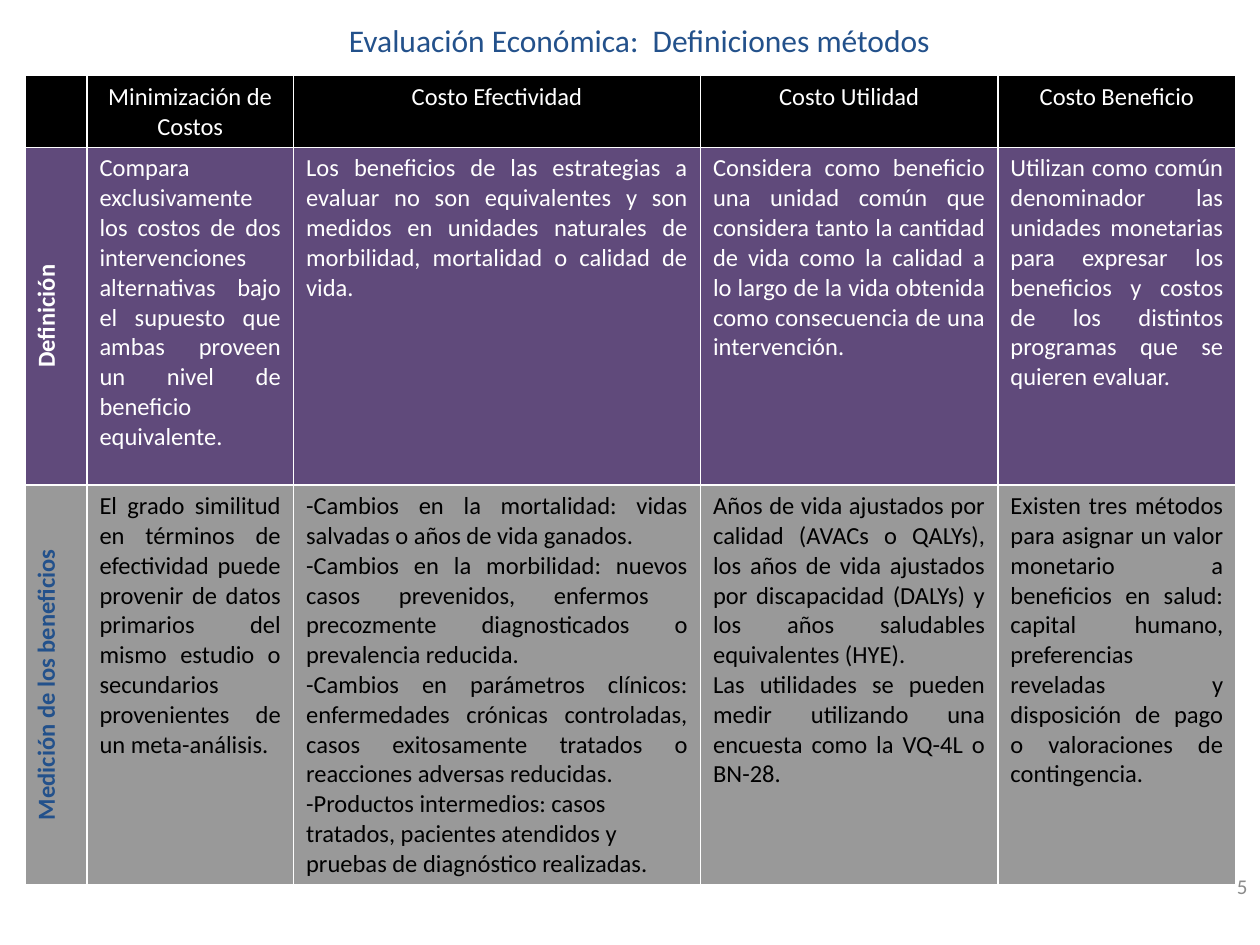
from lxml import etree
from pptx import Presentation
from pptx.dml.color import RGBColor
from pptx.enum.text import MSO_ANCHOR, PP_ALIGN
from pptx.oxml.ns import qn
from pptx.util import Inches, Pt

CENTER, JUSTIFY = PP_ALIGN.CENTER, PP_ALIGN.JUSTIFY
LEFT, RIGHT = PP_ALIGN.LEFT, PP_ALIGN.RIGHT
MIDDLE = MSO_ANCHOR.MIDDLE

COLORS = {
    "blue": "23518B", "white": "FFFFFF", "black": "000000",
    "purple": "604A7B", "gray": "999999", "number": "8C8C8C",
}
COLUMN_WIDTHS = [0.49, 1.64, 3.23, 2.36, 1.89]
ROW_HEIGHTS = [0.57, 2.68, 3.17]
METHODS = ["Minimización de Costos", "Costo Efectividad", "Costo Utilidad", "Costo Beneficio"]
DEFINITIONS = [
    ["Compara exclusivamente los costos de dos intervenciones alternativas bajo el supuesto "
     "que ambas proveen un nivel de beneficio equivalente."],
    ["Los beneficios de las estrategias a evaluar no son equivalentes y son medidos en "
     "unidades naturales de morbilidad, mortalidad o calidad de vida."],
    ["Considera como beneficio una unidad común que considera tanto la cantidad de vida como "
     "la calidad a lo largo de la vida obtenida como consecuencia de una intervención."],
    ["Utilizan como común denominador las unidades monetarias para expresar los beneficios y "
     "costos de los distintos programas que se quieren evaluar."],
]
MEASUREMENTS = [
    ["El grado similitud en términos de efectividad puede provenir de datos primarios del "
     "mismo estudio o secundarios provenientes de un meta-análisis."],
    ["-Cambios en la mortalidad: vidas salvadas o años de vida ganados.",
     "-Cambios en la morbilidad: nuevos casos prevenidos, enfermos  precozmente "
     "diagnosticados o prevalencia reducida.",
     "-Cambios en parámetros clínicos: enfermedades crónicas controladas, casos exitosamente "
     "tratados o reacciones adversas reducidas.",
     "-Productos intermedios: casos",
     "tratados, pacientes atendidos y pruebas de diagnóstico realizadas."],
    ["Años de vida ajustados por calidad (AVACs o QALYs), los años de vida ajustados por "
     "discapacidad (DALYs) y los años saludables equivalentes (HYE).",
     "Las utilidades se pueden medir utilizando una encuesta como la VQ-4L o BN-28."],
    ["Existen tres métodos para asignar un valor monetario a beneficios en salud: capital "
     "humano, preferencias reveladas y disposición de pago o valoraciones de contingencia."],
]
LEFT_ALIGNED = MEASUREMENTS[1][3:]


def write(frame, paragraphs, size=14, color="white", bold=False, align=JUSTIFY):
    """Fill a text frame with formatted paragraphs."""
    for index, text in enumerate(paragraphs):
        paragraph = frame.paragraphs[0] if index == 0 else frame.add_paragraph()
        paragraph.alignment = LEFT if text in LEFT_ALIGNED else align
        run = paragraph.add_run()
        run.text = text
        run.font.name = "Calibri"
        run.font.size = Pt(size)
        run.font.bold = bold
        run.font.color.rgb = RGBColor.from_string(COLORS[color])


def add_label(slide, box, text, **style):
    """Place one line of text, vertically centred in its box."""
    frame = slide.shapes.add_textbox(*map(Inches, box)).text_frame
    frame.word_wrap = True
    frame.vertical_anchor = MIDDLE
    write(frame, [text], **style)


def paint_cell(cell, fill):
    """Give a cell thin white borders and a solid fill."""
    properties = cell._tc.get_or_add_tcPr()
    for side in "LRTB":
        line = etree.SubElement(properties, qn(f"a:ln{side}"), w=str(Pt(1)))
        solid = etree.SubElement(line, qn("a:solidFill"))
        etree.SubElement(solid, qn("a:srgbClr"), val=COLORS["white"])
    cell.fill.solid()
    cell.fill.fore_color.rgb = RGBColor.from_string(COLORS[fill])


def fill_header(table):
    """Write the method names across the first row."""
    paint_cell(table.cell(0, 0), "black")
    for column, method in enumerate(METHODS, 1):
        cell = table.cell(0, column)
        paint_cell(cell, "black")
        write(cell.text_frame, [method], align=CENTER)


def fill_row(table, row, heading, entries, fill, heading_color, color):
    """Write a row with a rotated heading and one entry per method."""
    heading_cell = table.cell(row, 0)
    paint_cell(heading_cell, fill)
    heading_cell._tc.get_or_add_tcPr().set("vert", "vert270")
    write(heading_cell.text_frame, [heading], color=heading_color, bold=True, align=CENTER)
    for column, paragraphs in enumerate(entries, 1):
        cell = table.cell(row, column)
        paint_cell(cell, fill)
        write(cell.text_frame, paragraphs, color=color)


def add_methods_table(slide, left, top):
    """Build the comparison of evaluation methods."""
    size = Inches(sum(COLUMN_WIDTHS)), Inches(sum(ROW_HEIGHTS))
    table = slide.shapes.add_table(
        len(ROW_HEIGHTS), len(COLUMN_WIDTHS), Inches(left), Inches(top), *size).table
    for column, width in zip(table.columns, COLUMN_WIDTHS):
        column.width = Inches(width)
    for row, height in zip(table.rows, ROW_HEIGHTS):
        row.height = Inches(height)
    fill_header(table)
    fill_row(table, 1, "Definición", DEFINITIONS, "purple", "white", "white")
    fill_row(table, 2, "Medición de los beneficios", MEASUREMENTS, "gray", "blue", "black")


def main():
    """Build and save the slide."""
    deck = Presentation()
    deck.slide_width, deck.slide_height = Inches(10), Inches(7.5)
    slide = deck.slides.add_slide(deck.slide_layouts[6])
    add_label(slide, (0.51, 0.13, 9.13, 0.38), "Evaluación Económica:  Definiciones métodos",
              size=18, color="blue", align=CENTER)
    add_methods_table(slide, 0.2, 0.6)
    add_label(slide, (7.67, 6.9, 2.33, 0.27), "5", size=12, color="number", align=RIGHT)
    deck.save("out.pptx")


if __name__ == "__main__":
    main()
